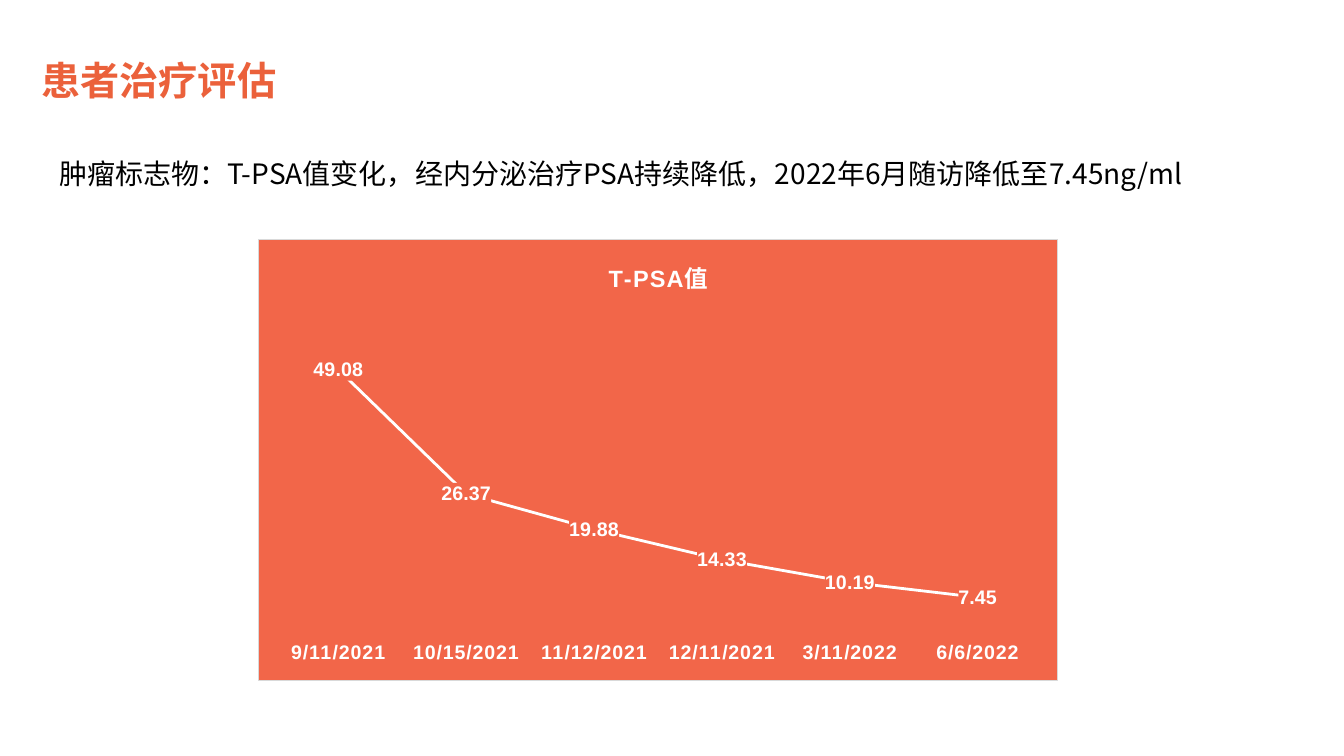
from lxml import etree
from pptx import Presentation
from pptx.chart.data import CategoryChartData
from pptx.dml.color import RGBColor
from pptx.enum.chart import XL_CHART_TYPE, XL_LABEL_POSITION, XL_MARKER_STYLE, XL_TICK_MARK
from pptx.enum.text import MSO_ANCHOR, MSO_AUTO_SIZE, PP_ALIGN
from pptx.oxml import parse_xml
from pptx.oxml.ns import nsdecls, qn
from pptx.util import Cm, Pt

LINE_STACKED = XL_CHART_TYPE.LINE_STACKED
CENTER = XL_LABEL_POSITION.CENTER
NO_MARKER = XL_MARKER_STYLE.NONE
NO_TICK = XL_TICK_MARK.NONE
LEFT = PP_ALIGN.LEFT
MIDDLE = MSO_ANCHOR.MIDDLE
NO_FIT = MSO_AUTO_SIZE.NONE

TITLE = "患者治疗评估"
FINDING = "肿瘤标志物：T-PSA值变化，经内分泌治疗PSA持续降低，2022年6月随访降低至7.45ng/ml"
SERIES = "T-PSA值"
PSA = [
    ("9/11/2021", 49.08),
    ("10/15/2021", 26.37),
    ("11/12/2021", 19.88),
    ("12/11/2021", 14.33),
    ("3/11/2022", 10.19),
    ("6/6/2022", 7.45),
]
COLORS = {"title": "EB613B", "text": "000000", "panel": "F26649", "white": "FFFFFF", "border": "D9D9D9"}
CJK = "Noto Sans CJK SC"
LATIN = "Arial"
PLOT = {"x": 0.02, "y": 0.16, "w": 0.96, "h": 0.745}


def rgb(name):
    return RGBColor.from_string(COLORS[name])


def style(font, name, size, color, bold=False, spacing=None):
    font.name, font.size, font.bold = name, Pt(size), bold
    font.color.rgb = rgb(color)
    rPr = font._element if hasattr(font, "_element") else font._rPr
    etree.SubElement(rPr, qn("a:ea")).set("typeface", CJK)
    if spacing:
        rPr.set("spc", str(spacing))


def write(shape, text, size, color, bold=False):
    tf = shape.text_frame
    tf.word_wrap = True
    tf.auto_size = NO_FIT
    tf.vertical_anchor = MIDDLE
    p = tf.paragraphs[0]
    p.text = text
    p.alignment = LEFT
    style(p.font, CJK, size, color, bold)


def place(shape, left, top, width, height):
    shape.left, shape.top, shape.width, shape.height = map(Cm, (left, top, width, height))


def add_psa_chart(s):
    data = CategoryChartData()
    data.categories = [day for day, value in PSA]
    data.add_series(SERIES, [value for day, value in PSA])
    chart = s.shapes.add_chart(LINE_STACKED, Cm(6.5), Cm(6.02), Cm(20.17), Cm(11.13), data).chart
    chart.has_legend = False
    chart.font.name, chart.font.size = LATIN, Pt(14)

    chart.has_title = True
    p = chart.chart_title.text_frame.paragraphs[0]
    p.text = SERIES
    style(p.font, LATIN, 16.8, "white", True, 100)

    dates = chart.category_axis
    dates.format.line.fill.background()
    dates.major_tick_mark = NO_TICK
    style(dates.tick_labels.font, LATIN, 14, "white", True, 50)
    values = chart.value_axis
    values.minimum_scale, values.maximum_scale = 0, 60
    values.has_major_gridlines = False
    values.visible = False

    plot = chart.plots[0]
    plot.vary_by_categories = False
    line = plot.series[0]
    line.smooth = False
    line.marker.style = NO_MARKER
    line.format.line.color.rgb = rgb("white")
    line.format.line.width = Pt(2)
    labels = line.data_labels
    labels.show_value = True
    labels.position = CENTER
    style(labels.font, LATIN, 14, "white", True)

    def fill_xml(color):
        return f'<a:solidFill><a:srgbClr val="{COLORS[color]}"/></a:solidFill>'

    ns = nsdecls("c", "a")
    labels._element.find(qn("c:txPr")).addprevious(
        parse_xml(f'<c:spPr {ns}>{fill_xml("panel")}</c:spPr>'))

    space = chart._chartSpace
    space.chart.addnext(parse_xml(
        f'<c:spPr {ns}>{fill_xml("panel")}<a:ln w="9525">{fill_xml("border")}</a:ln></c:spPr>'))
    area = space.chart.plotArea
    for old in area.findall(qn("c:layout")):
        area.remove(old)
    sizes = "".join(f'<c:{key} val="{value}"/>' for key, value in PLOT.items())
    area.insert(0, parse_xml(
        f'<c:layout {ns}><c:manualLayout><c:layoutTarget val="inner"/>'
        f'<c:xMode val="edge"/><c:yMode val="edge"/>{sizes}</c:manualLayout></c:layout>'))


def main():
    prs = Presentation()
    prs.slide_width, prs.slide_height = Cm(33.87), Cm(19.05)
    s = prs.slides.add_slide(prs.slide_layouts[5])
    title = s.shapes.title
    place(title, 0.79, 1.04, 30.48, 1.96)
    write(title, TITLE, 28, "title", True)
    add_psa_chart(s)
    finding = s.shapes.add_textbox(Cm(1.24), Cm(3.81), Cm(31.85), Cm(1.12))
    write(finding, FINDING, 20, "text")
    prs.save("out.pptx")


if __name__ == "__main__":
    main()
